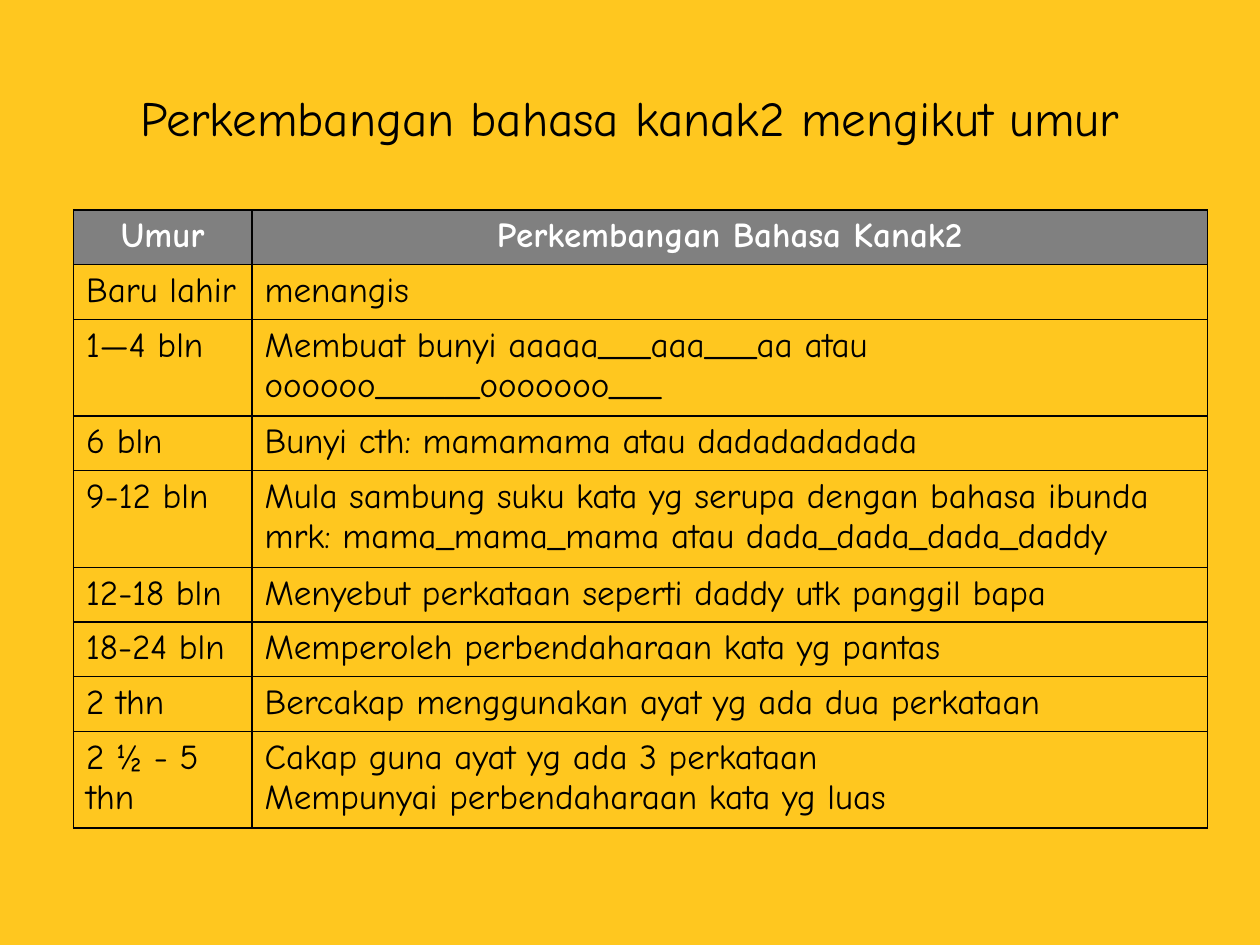
from dataclasses import dataclass

from lxml.etree import SubElement
from pptx import Presentation
from pptx.dml.color import RGBColor as RGB
from pptx.enum.text import MSO_ANCHOR as ANCHOR, PP_ALIGN as ALIGN
from pptx.oxml.ns import qn
from pptx.util import Pt


@dataclass(frozen=True)
class Theme:
    font: str = "Comic Neue"
    back: str = "FFC71F"
    head: str = "808080"
    ink: str = "000000"
    light: str = "FFFFFF"
    title: int = 28
    body: int = 20


T = Theme()


def add_run(p, text, size, color, bold=False):
    r = p.add_run()
    r.text = text
    r.font.name = T.font
    r.font.size = Pt(size)
    r.font.bold = bold
    r.font.color.rgb = RGB.from_string(color)


def add_borders(cell):
    tc_pr = cell._tc.get_or_add_tcPr()
    for side in ("lnL", "lnR", "lnT", "lnB"):
        ln = SubElement(tc_pr, qn(f"a:{side}"), w=str(Pt(1)))
        fill = SubElement(ln, qn("a:solidFill"))
        SubElement(fill, qn("a:srgbClr"), val=T.ink)


rows = [
    ("Umur", ["Perkembangan Bahasa Kanak2"]),
    ("Baru lahir", ["menangis"]),
    ("1—4 bln", ["Membuat bunyi aaaaa___aaa___aa atau oooooo______ooooooo___"]),
    ("6 bln", ["Bunyi cth: mamamama atau dadadadadada"]),
    ("9-12 bln", ["Mula sambung suku kata yg serupa dengan bahasa ibunda "
                  "mrk: mama_mama_mama atau dada_dada_dada_daddy"]),
    ("12-18 bln", ["Menyebut perkataan seperti daddy utk panggil bapa"]),
    ("18-24 bln", ["Memperoleh perbendaharaan kata yg pantas"]),
    ("2 thn", ["Bercakap menggunakan ayat yg ada dua perkataan"]),
    ("2 ½ - 5 thn", ["Cakap guna ayat yg ada 3 perkataan",
                     "Mempunyai perbendaharaan kata yg luas"]),
]

prs = Presentation()
prs.slide_width, prs.slide_height = Pt(720), Pt(540)
s = prs.slides.add_slide(prs.slide_layouts[6])
s.background.fill.solid()
s.background.fill.fore_color.rgb = RGB.from_string(T.back)

sp = s.shapes.add_textbox(Pt(36), Pt(21.6), Pt(648), Pt(90))
tf = sp.text_frame
tf.word_wrap = True
tf.vertical_anchor = ANCHOR.MIDDLE
p = tf.paragraphs[0]
p.alignment = ALIGN.CENTER
add_run(p, "Perkembangan bahasa kanak2 mengikut umur", T.title, T.ink)

row_h = 29.5
table = s.shapes.add_table(len(rows), 2, Pt(42), Pt(120), Pt(648),
                           Pt(row_h * len(rows))).table
table.first_row = table.horz_banding = False
for col, width in zip(table.columns, (102, 546)):
    col.width = Pt(width)

for i, (age, stages) in enumerate(rows):
    head = i == 0
    table.rows[i].height = Pt(row_h)
    for j, lines in enumerate(([age], stages)):
        cell = table.cell(i, j)
        add_borders(cell)
        if head:
            cell.fill.solid()
            cell.fill.fore_color.rgb = RGB.from_string(T.head)
        else:
            cell.fill.background()
        tf = cell.text_frame
        for k, line in enumerate(lines):
            p = tf.add_paragraph() if k else tf.paragraphs[0]
            p.alignment = ALIGN.CENTER if head else ALIGN.LEFT
            add_run(p, line, T.body, T.light if head else T.ink, head)

prs.save("out.pptx")
